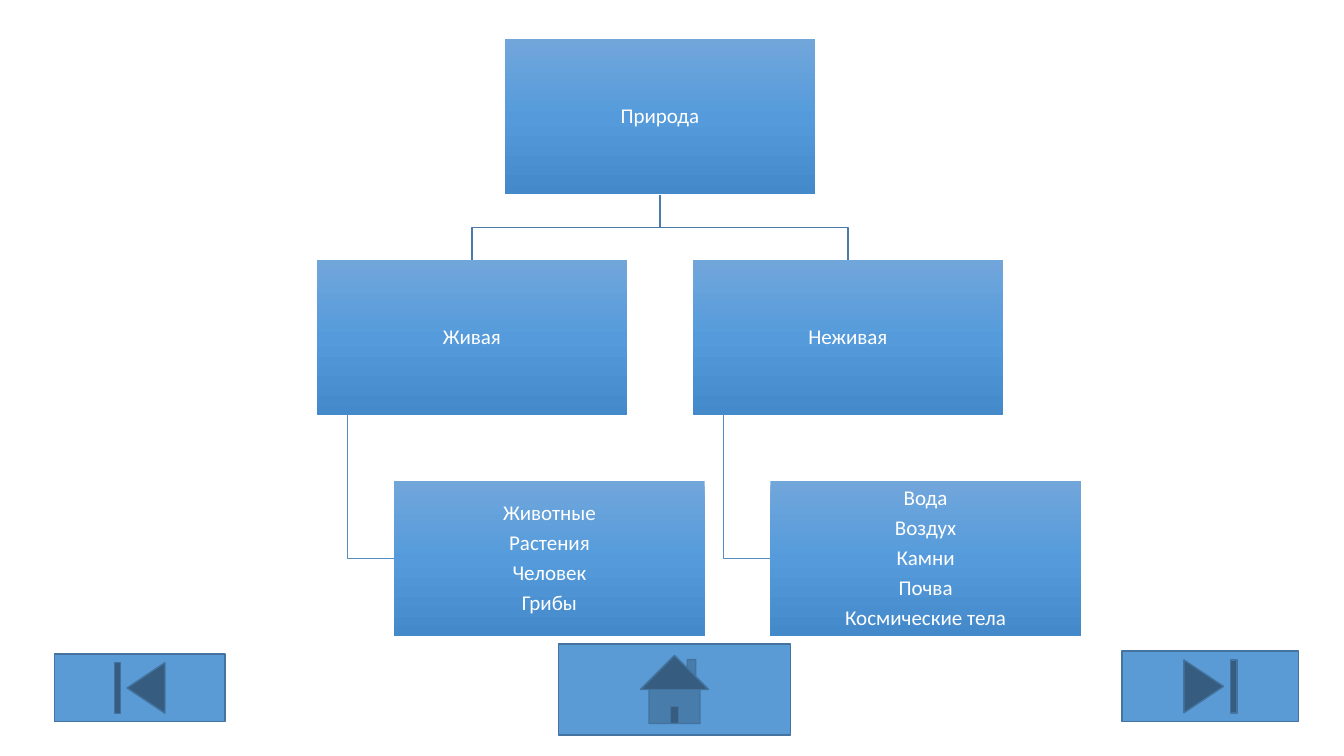
"""Build a slide with a tree of living and non-living nature and three navigation buttons."""
import copy

import pptx
import pptx.dml.color
import pptx.enum.shapes
import pptx.enum.text
import pptx.oxml.ns
import pptx.util

Inches = pptx.util.Inches
Pt = pptx.util.Pt
Shape = pptx.enum.shapes.MSO_SHAPE

ROOT = "Природа"
BRANCHES = [
    ("Живая", ["Животные", "Растения", "Человек", "Грибы"]),
    ("Неживая", ["Вода", "Воздух", "Камни", "Почва", "Космические тела"]),
]
BUTTONS = [
    (Shape.ACTION_BUTTON_HOME, (5.54, 6.39, 2.3, 0.9)),
    (Shape.ACTION_BUTTON_BEGINNING, (0.54, 6.49, 1.69, 0.67)),
    (Shape.ACTION_BUTTON_END, (11.13, 6.46, 1.75, 0.7)),
]
THEME = {
    "font": "Calibri",
    "size": 15,
    "text": "FFFFFF",
    "gradient": [(0, "71A6DB"), (0.5, "559BDB"), (1, "448ACA")],
    "upper_line": "497CAB",
    "lower_line": "538DC1",
    "button": "5B9BD5",
    "button_line": "43739E",
}
BOX_W, BOX_H = 3.08, 1.54
TOP, ROW_PITCH = 0.39, 2.19
BRANCH_LEFT, BRANCH_PITCH = 3.14, 3.73
LEAF_INDENT, TRUNK_INDENT = BOX_W / 4, BOX_W / 10


def rgb(value):
    """Return a colour object for a hex value."""
    return pptx.dml.color.RGBColor.from_string(value)


def apply(target, formats):
    """Set each named attribute on the target."""
    for name, value in formats.items():
        setattr(target, name, value)


def add_link(slide, points, color):
    """Draw an open angled line through the points."""
    corners = [(Inches(x), Inches(y)) for x, y in points]
    builder = slide.shapes.build_freeform(*corners[0])
    builder.add_line_segments(corners[1:], close=False)
    link = builder.convert_to_shape()
    link.shadow.inherit = False
    link.fill.background()
    link.line.color.rgb = rgb(color)
    link.line.width = Pt(1)


def fill_gradient(box):
    """Give the box the vertical three-stop gradient."""
    box.fill.gradient()
    box.fill.gradient_angle = 270
    first_stop = box.element.spPr.find(".//" + pptx.oxml.ns.qn("a:gs"))
    first_stop.addnext(copy.deepcopy(first_stop))
    for stop, (position, color) in zip(box.fill.gradient_stops, THEME["gradient"]):
        stop.position = position
        stop.color.rgb = rgb(color)


def add_box(slide, left, top, lines):
    """Add a gradient box with centred lines of text."""
    box = slide.shapes.add_shape(
        Shape.RECTANGLE, Inches(left), Inches(top), Inches(BOX_W), Inches(BOX_H))
    box.shadow.inherit = False
    fill_gradient(box)
    box.line.fill.background()
    frame = box.text_frame
    inset = Inches(0.01)
    apply(frame, {
        "margin_left": inset, "margin_top": inset,
        "margin_right": inset, "margin_bottom": inset,
        "word_wrap": True, "vertical_anchor": pptx.enum.text.MSO_ANCHOR.MIDDLE,
    })
    for index, line in enumerate(lines):
        paragraph = frame.add_paragraph() if index else frame.paragraphs[0]
        apply(paragraph, {
            "text": line, "alignment": pptx.enum.text.PP_ALIGN.CENTER,
            "line_spacing": 0.9, "space_after": Pt(THEME["size"] * 0.35),
        })
        font = paragraph.runs[0].font
        apply(font, {"name": THEME["font"], "size": Pt(THEME["size"])})
        font.color.rgb = rgb(THEME["text"])


def add_button(slide, kind, place):
    """Add one navigation button."""
    button = slide.shapes.add_shape(kind, *map(Inches, place))
    button.shadow.inherit = False
    button.fill.solid()
    button.fill.fore_color.rgb = rgb(THEME["button"])
    button.line.color.rgb = rgb(THEME["button_line"])
    button.line.width = Pt(1)


def main():
    """Lay out the tree and the buttons and save the file."""
    deck = pptx.Presentation()
    apply(deck, {"slide_width": Inches(13.33), "slide_height": Inches(7.5)})
    slide = deck.slides.add_slide(deck.slide_layouts[6])

    root_left = BRANCH_LEFT + BRANCH_PITCH * (len(BRANCHES) - 1) / 2
    root_center, root_bottom = root_left + BOX_W / 2, TOP + BOX_H
    branch_top, leaf_top = TOP + ROW_PITCH, TOP + 2 * ROW_PITCH
    fork = (root_bottom + branch_top) / 2
    leaf_middle = leaf_top + BOX_H / 2
    branch_lefts = [BRANCH_LEFT + i * BRANCH_PITCH for i in range(len(BRANCHES))]

    for left in branch_lefts:
        center, trunk = left + BOX_W / 2, left + TRUNK_INDENT
        add_link(slide, [(root_center, root_bottom), (root_center, fork),
                         (center, fork), (center, branch_top)], THEME["upper_line"])
        add_link(slide, [(trunk, branch_top + BOX_H), (trunk, leaf_middle),
                         (left + LEAF_INDENT, leaf_middle)], THEME["lower_line"])

    add_box(slide, root_left, TOP, [ROOT])
    for left, (branch, leaves) in zip(branch_lefts, BRANCHES):
        add_box(slide, left, branch_top, [branch])
        add_box(slide, left + LEAF_INDENT, leaf_top, leaves)

    for kind, place in BUTTONS:
        add_button(slide, kind, place)
    deck.save("out.pptx")


if __name__ == "__main__":
    main()
